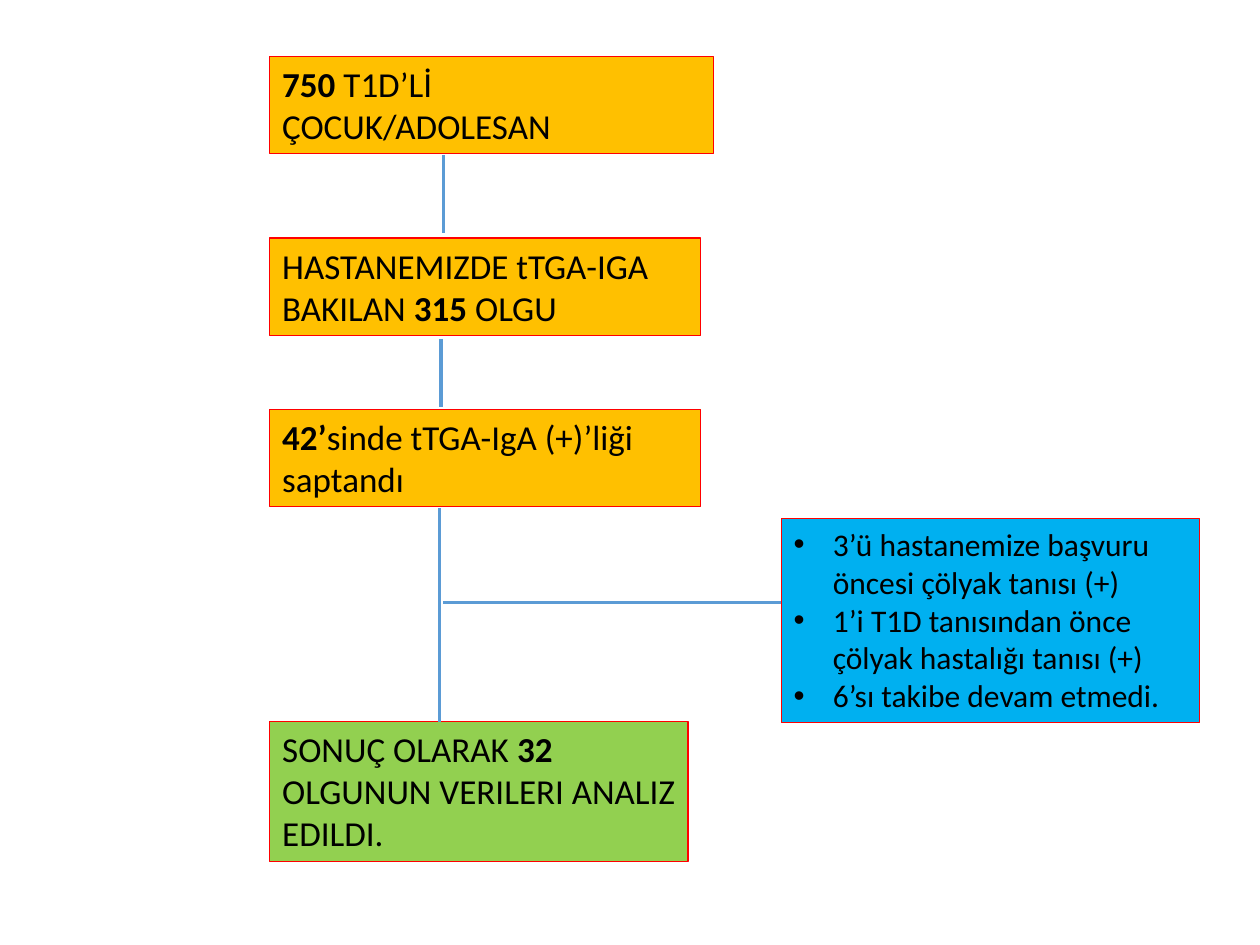
from dataclasses import dataclass

from lxml.etree import SubElement
from pptx import Presentation
from pptx.dml.color import RGBColor
from pptx.enum.shapes import MSO_CONNECTOR
from pptx.enum.text import MSO_AUTO_SIZE
from pptx.oxml.ns import qn
from pptx.util import Cm, Pt


@dataclass(frozen=True)
class Theme:
    font: str = "Calibri"
    text: str = "000000"
    step: str = "FFC000"
    result: str = "92D050"
    excluded: str = "00B0F0"
    border: str = "FF0000"
    connector: str = "5B9BD5"
    step_size: float = 20
    list_size: float = 18
    border_width: float = 0.75
    connector_width: float = 1.75


class FlowSlide:
    """Draw flow chart elements on one slide in a shared theme."""

    def __init__(self, slide, theme):
        self.slide = slide
        self.theme = theme

    def box(self, left, top, width, height, fill, paragraphs, size, bulleted=False):
        shape = self.slide.shapes.add_textbox(Cm(left), Cm(top), Cm(width), Cm(height))
        shape.fill.solid()
        shape.fill.fore_color.rgb = RGBColor.from_string(fill)
        shape.line.color.rgb = RGBColor.from_string(self.theme.border)
        shape.line.width = Pt(self.theme.border_width)
        frame = shape.text_frame
        frame.word_wrap = True
        frame.auto_size = MSO_AUTO_SIZE.SHAPE_TO_FIT_TEXT
        for index, runs in enumerate(paragraphs):
            paragraph = frame.add_paragraph() if index else frame.paragraphs[0]
            if bulleted:
                self.bullet(paragraph)
            paragraph.font.name = self.theme.font
            paragraph.font.size = Pt(size)
            paragraph.font.color.rgb = RGBColor.from_string(self.theme.text)
            for text, bold in runs:
                run = paragraph.add_run()
                run.text = text
                if bold:
                    run.font.bold = True

    def bullet(self, paragraph):
        properties = paragraph._p.get_or_add_pPr()
        properties.set("marL", str(Cm(0.79)))
        properties.set("indent", str(Cm(-0.79)))
        SubElement(properties, qn("a:buFont"), typeface="Arial")
        SubElement(properties, qn("a:buChar"), char="•")

    def step(self, left, top, width, height, fill, runs):
        self.box(left, top, width, height, fill, [runs], self.theme.step_size)

    def bullet_list(self, left, top, width, height, fill, items):
        paragraphs = [[(item, False)] for item in items]
        self.box(left, top, width, height, fill, paragraphs, self.theme.list_size, bulleted=True)

    def line(self, start_x, start_y, end_x, end_y, width=None):
        connector = self.slide.shapes.add_connector(
            MSO_CONNECTOR.STRAIGHT, Cm(start_x), Cm(start_y), Cm(end_x), Cm(end_y)
        )
        connector.line.color.rgb = RGBColor.from_string(self.theme.connector)
        connector.line.width = Pt(width or self.theme.connector_width)
        SubElement(connector._element.spPr, qn("a:effectLst"))


def main():
    presentation = Presentation()
    presentation.slide_width = Cm(25.4)
    presentation.slide_height = Cm(19.05)
    theme = Theme()
    flow = FlowSlide(presentation.slides.add_slide(presentation.slide_layouts[6]), theme)

    left = 5.44
    steps = [
        (1.14, 8.94, 1.96, theme.step, [("750", True), (" T1D’Lİ ÇOCUK/ADOLESAN", False)]),
        (4.8, 8.69, 1.96, theme.step,
         [("HASTANEMIZDE tTGA-IGA BAKILAN ", False), ("315", True), (" OLGU", False)]),
        (8.25, 8.69, 1.96, theme.step,
         [("42’", True), ("sinde tTGA-IgA (+)’liği saptandı", False)]),
        (14.55, 8.43, 2.82, theme.result,
         [("SONUÇ OLARAK ", False), ("32 ", True), ("OLGUNUN VERILERI ANALIZ EDILDI.", False)]),
    ]
    for top, width, height, fill, runs in steps:
        flow.step(left, top, width, height, fill, runs)

    flow.line(8.94, 3.12, 8.94, 4.7, width=1.5)
    flow.line(8.89, 6.83, 8.89, 8.2)
    flow.line(8.86, 10.24, 8.86, 14.55)
    flow.line(8.94, 12.14, 15.75, 12.14)

    flow.bullet_list(15.75, 10.46, 8.43, 4.11, theme.excluded, [
        "3’ü hastanemize başvuru öncesi çölyak tanısı (+)",
        "1’i T1D tanısından önce çölyak hastalığı tanısı (+)",
        "6’sı takibe devam etmedi.",
    ])
    presentation.save("out.pptx")


if __name__ == "__main__":
    main()
